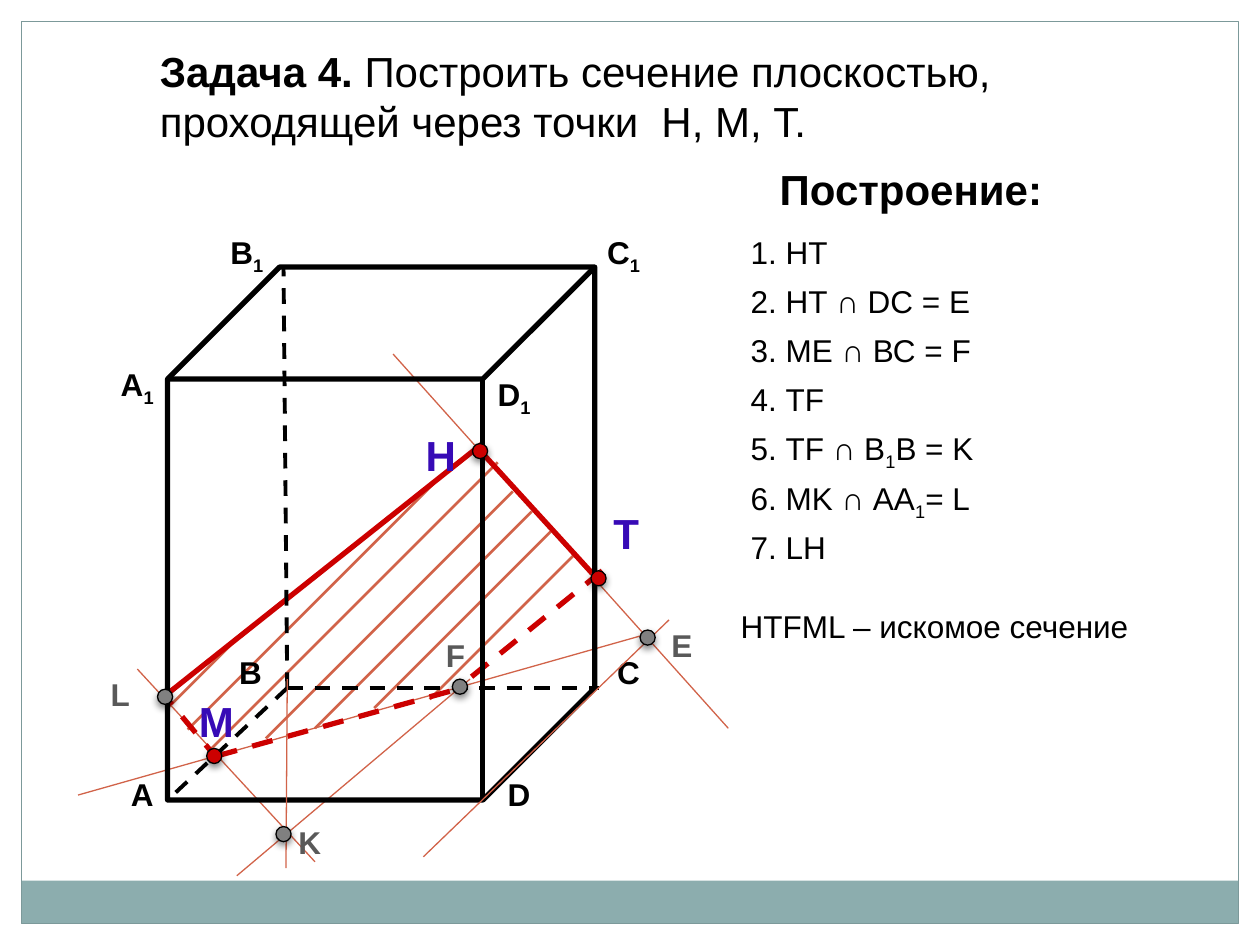
import pptx
import pptx.dml.color
import pptx.enum.dml
import pptx.enum.shapes
import pptx.oxml
import pptx.oxml.ns
import pptx.util

Inches = pptx.util.Inches
Pt = pptx.util.Pt
SHAPES = pptx.enum.shapes.MSO_SHAPE

BLACK, GREY, LABEL_GREY = "000000", "808080", "595959"
RED, ORANGE, VIOLET = "CC0000", "D16349", "370AB6"
TEAL, FRAME_GREY = "8CADAE", "7C999A"
SUBSCRIPT = "₁"  # marks a lowered 1 in the label strings below

SHADOW = (
    '<a:effectLst %s><a:outerShdw blurRad="50800" dist="25400" dir="5400000" rotWithShape="0">'
    '<a:srgbClr val="000000"><a:alpha val="45000"/></a:srgbClr></a:outerShdw></a:effectLst>'
    % pptx.oxml.ns.nsdecls("a"))
NO_EFFECT = "<a:effectLst %s/>" % pptx.oxml.ns.nsdecls("a")

# All figure coordinates are offsets from the top left corner of the prism.
HATCHING = [  # x, y of the lower end, then the run of a 45 degree line
    (0, 3.5, 0.55), (0.16, 3.67, 1.95), (0.33, 3.84, 2.29), (0.78, 3.74, 1.96),
    (1.17, 3.66, 1.72), (1.64, 3.5, 1.4), (2.08, 3.43, 1.14)]
SECTION_EDGES = [  # start, end, dashed
    ((0.02, 3.37), (2.5, 1.4), False), ((0.41, 3.92), (0, 3.43), True),
    ((2.52, 1.5), (3.37, 2.43), False), ((3.45, 2.41), (2.34, 3.31), True),
    ((0.39, 3.88), (2.3, 3.35), True)]
LINES_BEHIND = [  # MK, FK, HT, ME
    ((1.17, 4.72), (-0.24, 3.19)), ((2.4, 3.27), (0.55, 4.83)),
    ((1.79, 0.69), (4.45, 3.66)), ((3.85, 2.9), (-0.71, 4.19))]
LINES_IN_FRONT = [((2.03, 4.68), (3.98, 2.8)), ((0.95, 3.27), (0.94, 4.77))]  # DC, BK
CORNER_B = (0.95, 3.34)
HIDDEN_ENDS = [(0.92, 0), (3.42, 3.34), (0, 4.23)]
VERTICES = [
    ("А", -0.39, 3.98), ("D", 2.6, 3.98), ("В₁", 0.4, -0.32), ("В", 0.47, 3.01),
    ("С", 3.47, 3.01), ("А₁", -0.47, 0.73), ("C₁", 3.39, -0.32), ("D₁", 2.52, 0.81)]
GIVEN_POINTS = [  # name, dot centre, label corner
    ("Н", (2.48, 1.46), (1.95, 1.24)), ("М", (0.37, 3.88), (0.15, 3.35)),
    ("Т", (3.42, 2.47), (3.44, 1.86))]
FOUND_POINTS = [
    ("E", (3.81, 2.94), (3.9, 2.8)), ("F", (2.32, 3.33), (2.11, 2.88)),
    ("K", (0.92, 4.5), (0.94, 4.36)), ("L", (-0.02, 3.41), (-0.55, 3.19))]
STEPS = ["1. НТ", "2. НТ ∩ DС = E", "3. ME ∩ ВС = F", "4. ТF",
         "5. ТF ∩ В₁В = K", "6. МK ∩ АА₁= L", "7. LН"]


def color(value):
    return pptx.dml.color.RGBColor.from_string(value)


def add_run(paragraph, text, size, text_color, bold):
    run = paragraph.add_run()
    run.text = text
    run.font.name = "Arial"
    run.font.size = Pt(size)
    run.font.bold = bold
    run.font.color.rgb = color(text_color)
    return run


def add_text(slide, box, parts, size=18, text_color=BLACK):
    """Parts are (text, bold) pairs; the subscript mark becomes a lowered 1."""
    text_box = slide.shapes.add_textbox(*map(Inches, box))
    text_box.text_frame.word_wrap = True
    paragraph = text_box.text_frame.paragraphs[0]
    for text, bold in parts:
        for index, piece in enumerate(text.split(SUBSCRIPT)):
            if index:
                lowered = add_run(paragraph, "1", size, text_color, bold)
                lowered._r.get_or_add_rPr().set("baseline", "-25000")
            if piece:
                add_run(paragraph, piece, size, text_color, bold)


def add_shape(slide, kind, box, fill=None, line=None, width=0.75):
    shape = slide.shapes.add_shape(kind, *map(Inches, box))
    shape.shadow.inherit = False
    if fill:
        shape.fill.solid()
        shape.fill.fore_color.rgb = color(fill)
    else:
        shape.fill.background()
    if line:
        shape.line.color.rgb = color(line)
        shape.line.width = Pt(width)
    else:
        shape.line.fill.background()
    return shape


def add_line(slide, box, start, end, line_color, width, dashed=False):
    left, top = box[:2]
    connector = slide.shapes.add_connector(
        pptx.enum.shapes.MSO_CONNECTOR.STRAIGHT,
        Inches(left + start[0]), Inches(top + start[1]),
        Inches(left + end[0]), Inches(top + end[1]))
    connector.line.color.rgb = color(line_color)
    connector.line.width = Pt(width)
    if dashed:
        connector.line.dash_style = pptx.enum.dml.MSO_LINE.DASH
    connector._element.spPr.append(pptx.oxml.parse_xml(NO_EFFECT))


def add_point(slide, box, point, dot_color, label_color, size):
    name, centre, corner = point
    left, top = box[:2]
    diameter = 0.12
    dot = add_shape(slide, SHAPES.OVAL,
                    (left + centre[0] - diameter / 2, top + centre[1] - diameter / 2,
                     diameter, diameter), dot_color, BLACK)
    properties = dot._element.spPr
    properties.remove(properties.find(pptx.oxml.ns.qn("a:effectLst")))
    properties.append(pptx.oxml.parse_xml(SHADOW))
    add_text(slide, (left + corner[0], top + corner[1], 0.47, 0.4),
             [(name, True)], size, label_color)


def add_frame(slide, box):
    left, top, width, height = box
    band = 0.34
    add_shape(slide, SHAPES.RECTANGLE, (left, top + height - band, width, band), TEAL)
    add_shape(slide, SHAPES.RECTANGLE, box, line=FRAME_GREY)


def add_prism(slide, box):
    left, top = box[:2]
    # Section and the construction lines behind the prism
    for x, y, run in HATCHING:
        add_line(slide, box, (x, y), (x + run, y - run), ORANGE, 1.5)
    for start, end in LINES_BEHIND:
        add_line(slide, box, start, end, ORANGE, 0.75)
    for start, end, dashed in SECTION_EDGES:
        add_line(slide, box, start, end, RED, 3, dashed)
    # Prism with hidden edges and vertex names
    prism = add_shape(slide, SHAPES.CUBE, box, line=BLACK, width=3)
    prism.adjustments[0] = 0.262
    for end in HIDDEN_ENDS:
        add_line(slide, box, CORNER_B, end, BLACK, 2.25, True)
    for name, x, y in VERTICES:
        add_text(slide, (left + x, top + y, 0.55, 0.41), [(name, True)])
    # Construction lines in front, then the points
    for start, end in LINES_IN_FRONT:
        add_line(slide, box, start, end, ORANGE, 0.75)
    for point in GIVEN_POINTS:
        add_point(slide, box, point, RED, VIOLET, 24)
    for point in FOUND_POINTS:
        add_point(slide, box, point, GREY, LABEL_GREY, 18)


def add_solution(slide, box):
    left, top, width, height = box
    add_text(slide, (left + 0.31, top, 2.34, 0.51), [("Построение:", True)], 24)
    for index, step in enumerate(STEPS):
        add_text(slide, (left + 0.08, top + 0.55 + 0.39 * index, 2.03, 0.4), [(step, False)])
    add_text(slide, (left, top + height - 0.4, width, 0.4),
             [("НТFМL – искомое сечение", False)])


def main():
    presentation = pptx.Presentation()
    presentation.slide_width = Inches(10)
    presentation.slide_height = Inches(7.5)
    slide = presentation.slides.add_slide(presentation.slide_layouts[6])
    add_frame(slide, (0.17, 0.17, 9.66, 7.16))
    add_text(slide, (1.17, 0.31, 8.2, 0.91),
             [("Задача 4. ", True),
              ("Построить сечение плоскостью, проходящей через точки  Н, М, Т.", False)], 24)
    add_prism(slide, (1.33, 2.12, 3.39, 4.23))
    add_solution(slide, (5.78, 1.25, 3.67, 3.92))
    presentation.save("out.pptx")


if __name__ == "__main__":
    main()
